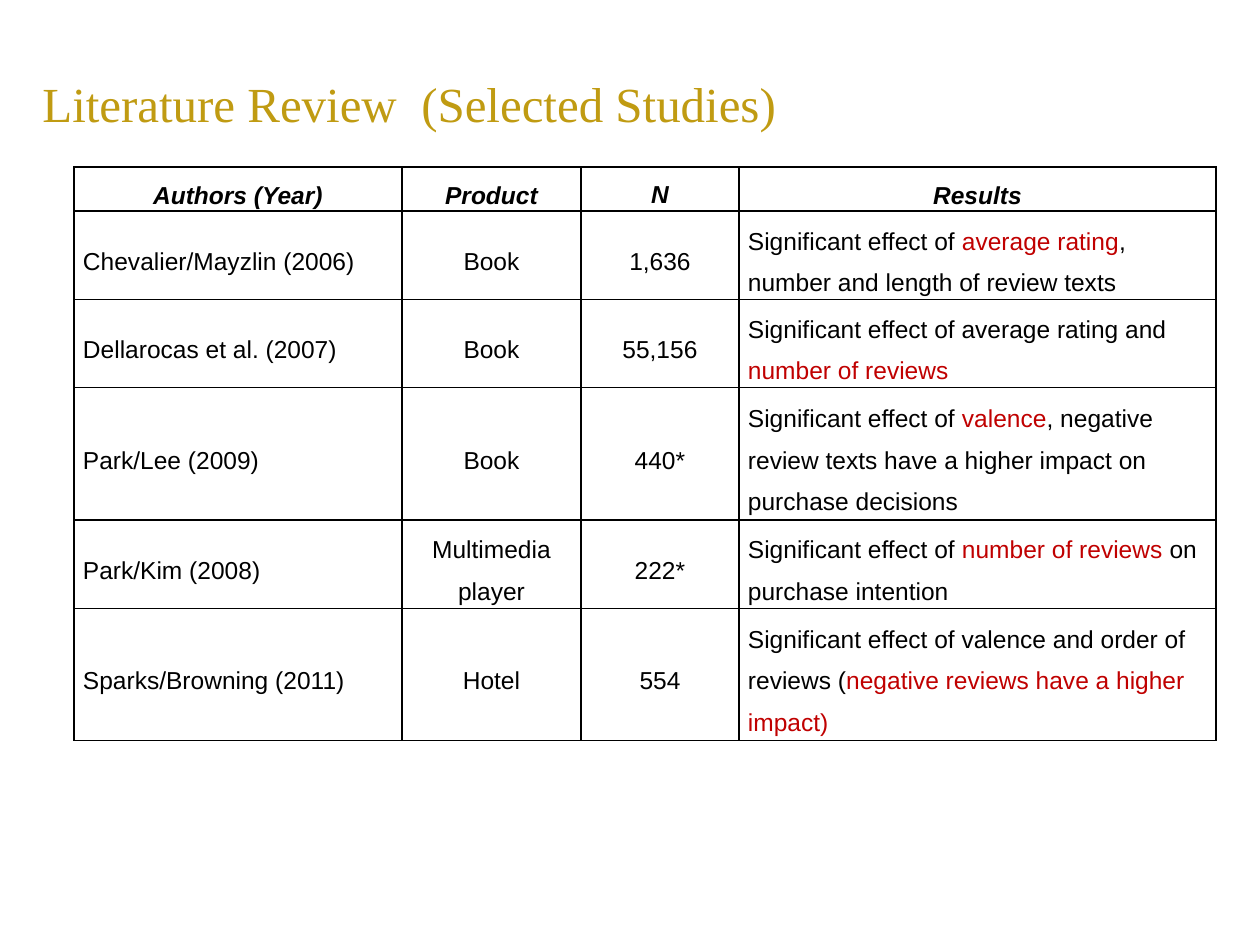
"""Build the literature review slide with its table of selected studies."""
from dataclasses import dataclass

from lxml import etree
from pptx import Presentation
from pptx.dml.color import RGBColor
from pptx.enum.text import MSO_ANCHOR, PP_ALIGN
from pptx.oxml.ns import qn
from pptx.slide import Slide
from pptx.table import _Cell
from pptx.text.text import _Paragraph
from pptx.util import Emu, Pt

TOP, MIDDLE = MSO_ANCHOR.TOP, MSO_ANCHOR.MIDDLE
LEFT, CENTER = PP_ALIGN.LEFT, PP_ALIGN.CENTER
EMU_PER_PX = 914400 / 126
COLORS = {"title": "C09B12", "text": "000000", "finding": "C00000", "border": "000000"}
COLUMN_WIDTHS = (328, 179, 158, 477)
HEADINGS = ("Authors (Year)", "Product", "N", "Results")
HEADING_HEIGHT = 44
CELL_INSET = 9


@dataclass(frozen=True)
class Span:
    text: str
    color: str = "text"


@dataclass(frozen=True)
class Study:
    authors: str
    product: str
    sample: str
    results: tuple[Span, ...]
    lines: int = 2

    @property
    def height(self) -> int:
        return self.lines * HEADING_HEIGHT


STUDIES = (
    Study("Chevalier/Mayzlin (2006)", "Book", "1,636", (
        Span("Significant effect of "), Span("average rating", "finding"),
        Span(", number and length of review texts"))),
    Study("Dellarocas et al. (2007)", "Book", "55,156", (
        Span("Significant effect of average rating and "),
        Span("number of reviews", "finding"))),
    Study("Park/Lee (2009)", "Book", "440*", (
        Span("Significant effect of "), Span("valence", "finding"),
        Span(", negative review texts have a higher impact on purchase decisions")), 3),
    Study("Park/Kim (2008)", "Multimedia player", "222*", (
        Span("Significant effect of "), Span("number of reviews ", "finding"),
        Span("on purchase intention"))),
    Study("Sparks/Browning (2011)", "Hotel", "554", (
        Span("Significant effect of valence and order of reviews ("),
        Span("negative reviews have a higher impact)", "finding")), 3),
)


def px(length: int) -> Emu:
    return Emu(round(length * EMU_PER_PX))


def add_span(para: _Paragraph, span: Span, font: str, size: int,
             heading: bool = False) -> None:
    run = para.add_run()
    run.text = span.text
    run.font.name = font
    run.font.size = Pt(size)
    run.font.bold = heading
    run.font.italic = heading
    run.font.color.rgb = RGBColor.from_string(COLORS[span.color])


def add_borders(cell: _Cell) -> None:
    properties = cell._tc.get_or_add_tcPr()
    for side in ("lnL", "lnR", "lnT", "lnB"):
        line = etree.SubElement(properties, qn(f"a:{side}"), w=str(Pt(1)))
        fill = etree.SubElement(line, qn("a:solidFill"))
        etree.SubElement(fill, qn("a:srgbClr"), val=COLORS["border"])


def fill_cell(cell: _Cell, spans: tuple[Span, ...], align: PP_ALIGN,
              anchor: MSO_ANCHOR = MIDDLE, heading: bool = False) -> None:
    cell.margin_left = cell.margin_right = px(CELL_INSET)
    cell.margin_top = cell.margin_bottom = 0
    cell.vertical_anchor = anchor
    add_borders(cell)
    cell.fill.background()
    para = cell.text_frame.paragraphs[0]
    para.alignment = align
    para.line_spacing = 1.5
    for span in spans:
        add_span(para, span, "Arial", 14, heading)


def add_title(page: Slide) -> None:
    box = page.shapes.add_textbox(px(30), px(54), px(878), px(97))
    box.text_frame.word_wrap = True
    box.text_frame.vertical_anchor = MIDDLE
    para = box.text_frame.paragraphs[0]
    add_span(para, Span("Literature Review  (Selected Studies)", "title"),
             "Times New Roman", 28)


def add_studies(page: Slide) -> None:
    heights = [HEADING_HEIGHT] + [study.height for study in STUDIES]
    frame = page.shapes.add_table(len(heights), len(COLUMN_WIDTHS), px(74), px(167),
                                  px(sum(COLUMN_WIDTHS)), px(sum(heights)))
    table = frame.table
    table.first_row = table.horz_banding = False
    for column, width in zip(table.columns, COLUMN_WIDTHS):
        column.width = px(width)
    for row, height in zip(table.rows, heights):
        row.height = px(height)
    for index, heading in enumerate(HEADINGS):
        anchor = TOP if heading == "N" else MIDDLE
        fill_cell(table.cell(0, index), (Span(heading),), CENTER, anchor, True)
    for number, study in enumerate(STUDIES, start=1):
        fill_cell(table.cell(number, 0), (Span(study.authors),), LEFT)
        fill_cell(table.cell(number, 1), (Span(study.product),), CENTER)
        fill_cell(table.cell(number, 2), (Span(study.sample),), CENTER)
        fill_cell(table.cell(number, 3), study.results, LEFT)


def main() -> None:
    deck = Presentation()
    deck.slide_width, deck.slide_height = px(1260), px(945)
    page = deck.slides.add_slide(deck.slide_layouts[6])
    add_title(page)
    add_studies(page)
    deck.save("out.pptx")


if __name__ == "__main__":
    main()
